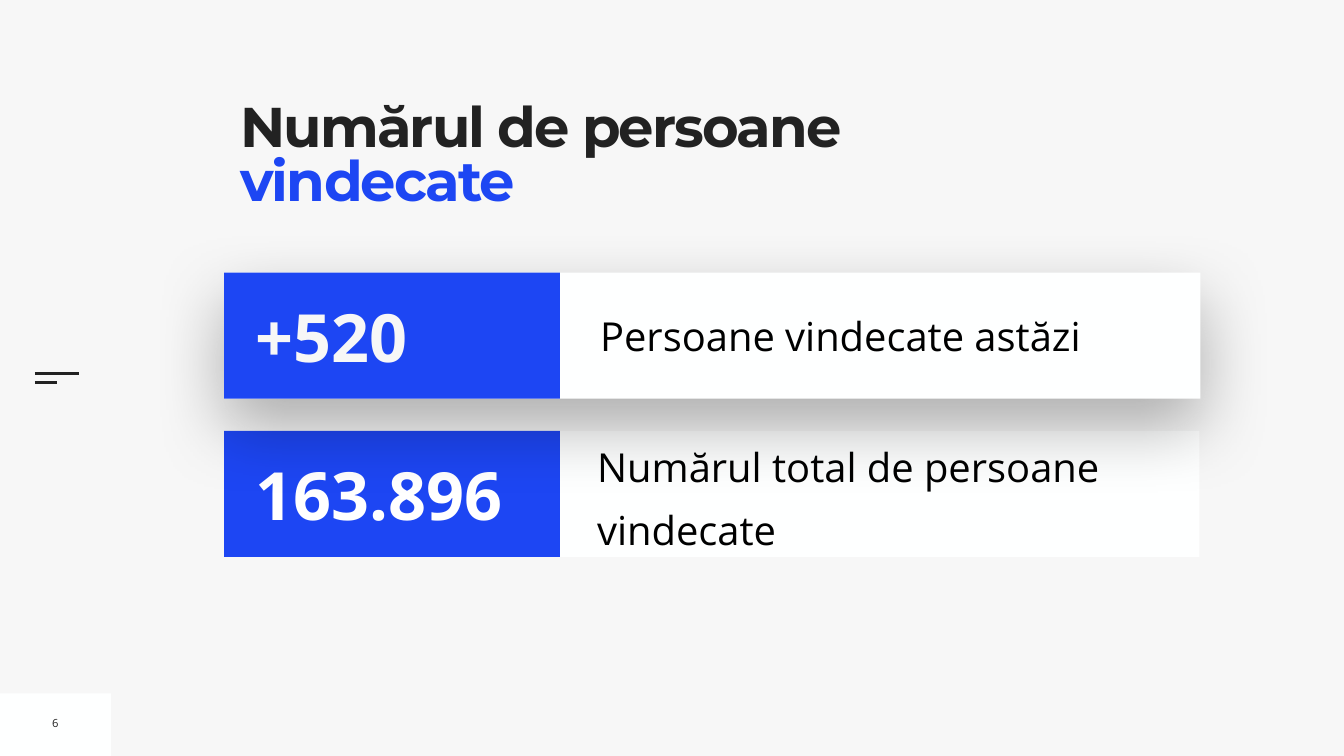
"""Build the slide showing today's and total recovered persons."""
from lxml.etree import SubElement
from pptx import Presentation
from pptx.dml.color import RGBColor
from pptx.enum.shapes import MSO_CONNECTOR, MSO_SHAPE
from pptx.enum.text import MSO_ANCHOR, PP_ALIGN
from pptx.oxml.ns import qn
from pptx.util import Inches, Pt

BACKGROUND = RGBColor(0xF7, 0xF7, 0xF7)
CARD = RGBColor(0xFE, 0xFF, 0xFF)
WHITE = RGBColor(0xFF, 0xFF, 0xFF)
BLACK = RGBColor(0, 0, 0)
DARK = RGBColor(0x22, 0x22, 0x22)
BLUE = RGBColor(0x1D, 0x46, 0xF3)

LEFT, CARD_HEIGHT = 4.45, 2.5


class Deck:
    heading_font = "Montserrat"
    body_font = "Open Sans"

    def __init__(self, width, height):
        self.prs = Presentation()
        self.prs.slide_width, self.prs.slide_height = Inches(width), Inches(height)
        self.s = self.prs.slides.add_slide(self.prs.slide_layouts[6])
        self.s.background.fill.solid()
        self.s.background.fill.fore_color.rgb = BACKGROUND

    def rect(self, x, y, w, h, color):
        sp = self.s.shapes.add_shape(MSO_SHAPE.RECTANGLE, Inches(x), Inches(y), Inches(w), Inches(h))
        sp.shadow.inherit = False
        sp.fill.solid()
        sp.fill.fore_color.rgb = color
        sp.line.fill.background()
        return sp

    def soft_shadow(self, sp):
        effects = sp._element.spPr.find(qn("a:effectLst"))
        shadow = SubElement(effects, qn("a:outerShdw"), blurRad=str(Pt(100)),
                            dist=str(Pt(40)), dir="5400000", rotWithShape="0")
        color = SubElement(shadow, qn("a:srgbClr"), val="000000")
        SubElement(color, qn("a:alpha"), val="30000")

    def line(self, x, y, length):
        c = self.s.shapes.add_connector(MSO_CONNECTOR.STRAIGHT, Inches(x), Inches(y),
                                        Inches(x + length), Inches(y))
        c.line.color.rgb = DARK
        c.line.width = Pt(3)
        SubElement(c._element.spPr, qn("a:effectLst"))

    def text(self, x, y, w, h, text, size, color, bold=False, inset=0.1, wrap=True):
        tf = self.s.shapes.add_textbox(Inches(x), Inches(y), Inches(w), Inches(h)).text_frame
        tf.word_wrap = wrap
        tf.vertical_anchor = MSO_ANCHOR.MIDDLE
        tf.margin_left = tf.margin_right = tf.margin_top = tf.margin_bottom = Inches(inset)
        p = tf.paragraphs[0]
        p.text = text
        p.font.name, p.font.size, p.font.bold = self.body_font, Pt(size), bold
        p.font.color.rgb = color
        return p

    def title(self, x, y, w, h, parts):
        tf = self.rect(x, y, w, h, BACKGROUND).text_frame
        tf.word_wrap = True
        tf.vertical_anchor = MSO_ANCHOR.TOP
        tf.margin_left = tf.margin_right = tf.margin_top = tf.margin_bottom = 0
        p = tf.paragraphs[0]
        p.alignment = PP_ALIGN.LEFT
        p.line_spacing = 0.8
        p.font.name, p.font.size, p.font.bold = self.heading_font, Pt(80), True
        for text, color in parts:
            r = p.add_run()
            r.text = text
            r.font.color.rgb = color
            r.font._element.set("spc", "-270")

    def card(self, y, width, number, number_color):
        base = self.rect(LEFT, y, width, CARD_HEIGHT, CARD)
        self.rect(LEFT, y, 6.66, CARD_HEIGHT, BLUE)
        self.text(4.98, y + 0.35, 6.03, 1.8, number, 95, number_color, bold=True)
        return base


def main():
    deck = Deck(26.67, 15)
    deck.rect(0, 13.76, 2.2, 1.24, CARD)
    deck.line(0.69, 7.41, 0.88)
    deck.line(0.69, 7.59, 0.44)
    deck.title(4.77, 2.07, 13.01, 2.73, [("Numărul de persoane ", DARK), ("vindecate", BLUE)])
    deck.text(0.93, 14.09, 0.34, 0.51, "6", 16, DARK, wrap=False).alignment = PP_ALIGN.CENTER

    deck.card(8.55, 19.35, "163.896", WHITE)
    p = deck.text(11.85, 8.56, 11.95, 2.36, "Numărul total de persoane vindecate", 57, BLACK, inset=0)
    p.line_spacing = 1.3
    p.space_before = Pt(20)

    today = deck.card(5.41, 19.37, "+520", BACKGROUND)
    deck.soft_shadow(today)
    deck.text(11.81, 6.07, 11.76, 1.16, "Persoane vindecate astăzi", 57, BLACK)
    deck.prs.save("out.pptx")


if __name__ == "__main__":
    main()
